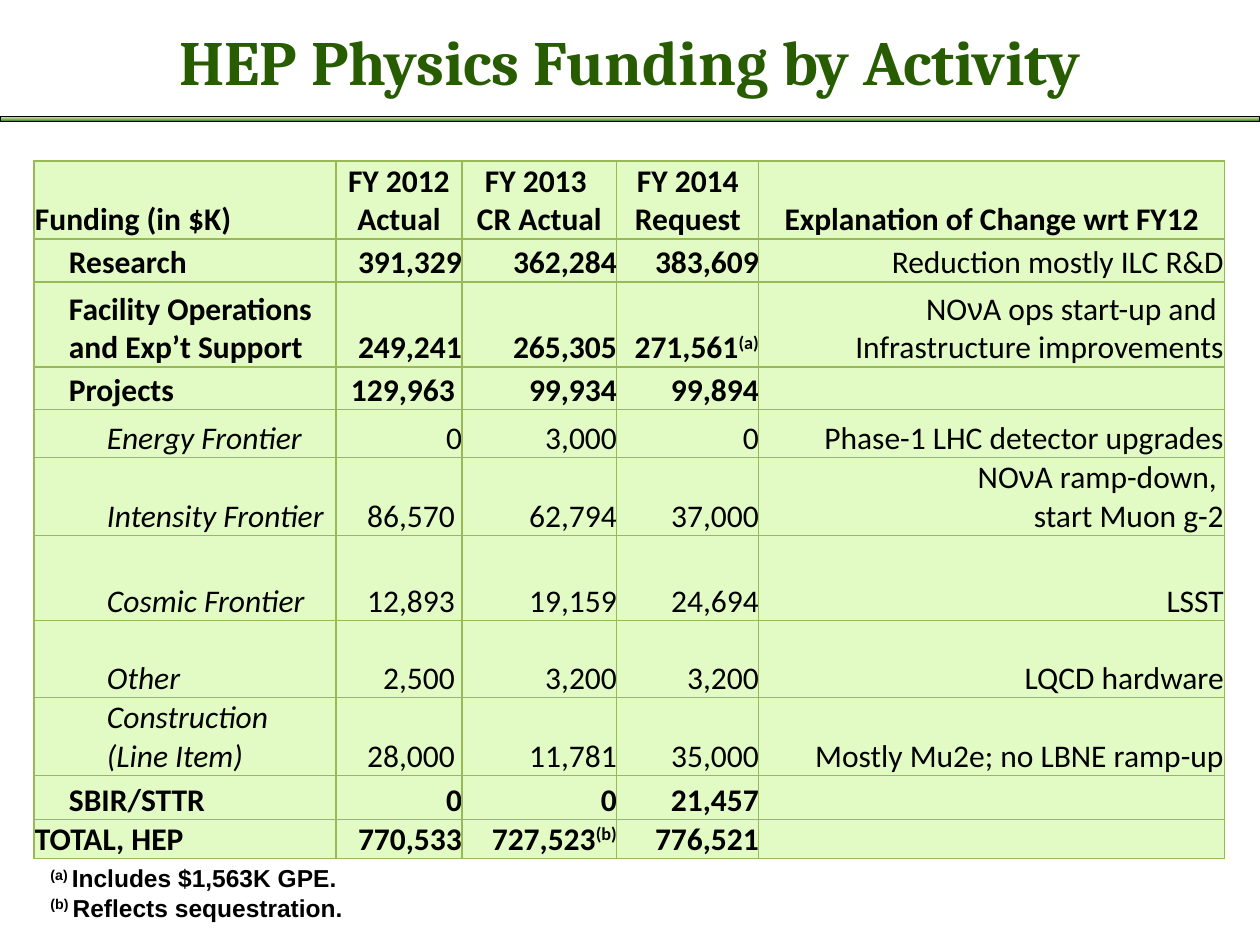
from copy import deepcopy
from dataclasses import dataclass

from lxml.etree import SubElement
from pptx import Presentation
from pptx.dml.color import RGBColor as RGB
from pptx.enum.shapes import MSO_SHAPE as Kind
from pptx.enum.text import MSO_ANCHOR as Anchor, PP_ALIGN as Align
from pptx.oxml.ns import qn
from pptx.util import Emu, Pt


@dataclass(frozen=True)
class Theme:
    head: str = "Cambria"
    body: str = "Calibri"
    note: str = "Arial"
    head_size: int = 36
    body_size: int = 18
    note_size: int = 14
    green: str = "285C00"
    ink: str = "000000"
    cell: str = "E2FAC4"
    edge: str = "98B955"
    bar: tuple = ("DDEBCF", "9CB86E", "156B13")


THEME = Theme()
COLS = (302, 126, 155, 142, 466)
TOP, GROUP, SUB = range(3)

# Level, row height in px, cells; "^" switches to a raised or symbol run and back
ROWS = (
    (TOP, 78, ("Funding (in $K)", "FY 2012 Actual", "FY 2013 \nCR Actual",
               "FY 2014 Request", "Explanation of Change wrt FY12")),
    (GROUP, 43, ("Research", "391,329", "362,284", "383,609",
                 "Reduction mostly ILC R&D")),
    (GROUP, 85, ("Facility Operations and Exp’t Support", "249,241", "265,305",
                 "271,561^(a)",
                 "NO^ν^A ops start-up and \nInfrastructure improvements")),
    (GROUP, 43, ("Projects", "129,963 ", "99,934", "99,894", "")),
    (SUB, 48, ("Energy Frontier", "0", "3,000", "0",
               "Phase-1 LHC detector upgrades")),
    (SUB, 78, ("Intensity Frontier", "86,570 ", "62,794", "37,000",
               "NO^ν^A ramp-down, \nstart Muon g-2")),
    (SUB, 85, ("Cosmic Frontier", "12,893 ", "19,159", "24,694", "LSST")),
    (SUB, 77, ("Other", "2,500 ", "3,200", "3,200", "LQCD hardware")),
    (SUB, 78, ("Construction (Line Item)", "28,000 ", "11,781", "35,000",
               "Mostly Mu2e; no LBNE ramp-up")),
    (GROUP, 44, ("SBIR/STTR", "0", "0", "21,457", "")),
    (TOP, 39, ("TOTAL, HEP", "770,533", "727,523^(b)", "776,521", "")),
)


def px(n):
    return Emu(round(n * 914400 / 126))


def write(frame, text, face, size, color=THEME.ink, bold=True, slant=False,
          align=Align.LEFT, indent=0):
    """Fill a text frame, one paragraph a line."""
    for i, line in enumerate(text.split("\n")):
        para = frame.add_paragraph() if i else frame.paragraphs[0]
        para.alignment = align
        if indent:
            para._p.get_or_add_pPr().set("marL", str(px(indent)))
        font = para.font
        font.name, font.size = face, Pt(size)
        font.bold, font.italic = bold, slant
        font.color.rgb = RGB.from_string(color)
        for n, part in enumerate(line.split("^")):
            if not part:
                continue
            run = para.add_run()
            run.text = part
            if part == "ν":
                run.font.name = THEME.note
            elif n % 2:
                run._r.get_or_add_rPr().set("baseline", "30000")


def add_text(slide, box, text, *style, **more):
    frame = slide.shapes.add_textbox(*map(px, box)).text_frame
    frame.word_wrap = True
    write(frame, text, *style, **more)
    return frame


def add_bar(slide, box):
    bar = slide.shapes.add_shape(Kind.RECTANGLE, *map(px, box))
    bar.shadow.inherit = False
    bar.line.color.rgb = RGB.from_string(THEME.ink)
    bar.line.width = Pt(0.5)
    fill = bar.fill
    fill.gradient()
    fill.gradient_angle = 270
    stops = fill._fill._gradFill.find(qn("a:gsLst"))
    stops.append(deepcopy(stops[-1]))
    for n, (stop, color) in enumerate(zip(fill.gradient_stops, THEME.bar)):
        stop.position = n / 2
        stop.color.rgb = RGB.from_string(color)


def edge(cell):
    """Draw a thin border on all four sides."""
    props = cell._tc.get_or_add_tcPr()
    for n, side in enumerate(("lnL", "lnR", "lnT", "lnB")):
        line = SubElement(props, qn(f"a:{side}"), w=str(Pt(0.75)))
        fill = SubElement(line, qn("a:solidFill"))
        SubElement(fill, qn("a:srgbClr"), val=THEME.edge)
        props.insert(n, line)


def fill_cell(cell, text, level, row, col):
    outer = col in (0, len(COLS) - 1)
    pad = px(1 if outer else 0)
    cell.margin_left = px(35) if col == 0 and level != TOP else pad
    cell.margin_right = cell.margin_top = pad
    cell.margin_bottom = 0
    cell.vertical_anchor = Anchor.BOTTOM
    cell.fill.solid()
    cell.fill.fore_color.rgb = RGB.from_string(THEME.cell)
    edge(cell)
    label = col == 0
    sub = level == SUB
    align = Align.LEFT if label else Align.RIGHT if row else Align.CENTER
    write(cell.text_frame, text, THEME.body, THEME.body_size,
          bold=row == 0 or not sub and col < len(COLS) - 1,
          slant=label and sub, align=align, indent=38 if label and sub else 0)


def add_grid(slide, left, top):
    size = sum(COLS), sum(high for _, high, _ in ROWS)
    grid = slide.shapes.add_table(len(ROWS), len(COLS),
                                  *map(px, (left, top, *size))).table
    grid.first_row = grid.horz_banding = False
    for col, wide in zip(grid.columns, COLS):
        col.width = px(wide)
    for r, (level, high, texts) in enumerate(ROWS):
        grid.rows[r].height = px(high)
        for c, text in enumerate(texts):
            fill_cell(grid.cell(r, c), text, level, r, c)


def main():
    deck = Presentation()
    deck.slide_width, deck.slide_height = px(1260), px(945)
    slide = deck.slides.add_slide(deck.slide_layouts[6])
    title = add_text(slide, (0, 24, 1260, 73), "HEP Physics Funding by Activity",
                     THEME.head, THEME.head_size, THEME.green,
                     align=Align.CENTER)
    title.vertical_anchor = Anchor.MIDDLE
    add_grid(slide, 34, 161)
    add_text(slide, (38, 857, 614, 72),
             "^(a) ^Includes $1,563K GPE.\n^(b) ^Reflects sequestration.",
             THEME.note, THEME.note_size)
    add_bar(slide, (0, 116, 1260, 6))
    deck.save("out.pptx")


if __name__ == "__main__":
    main()
